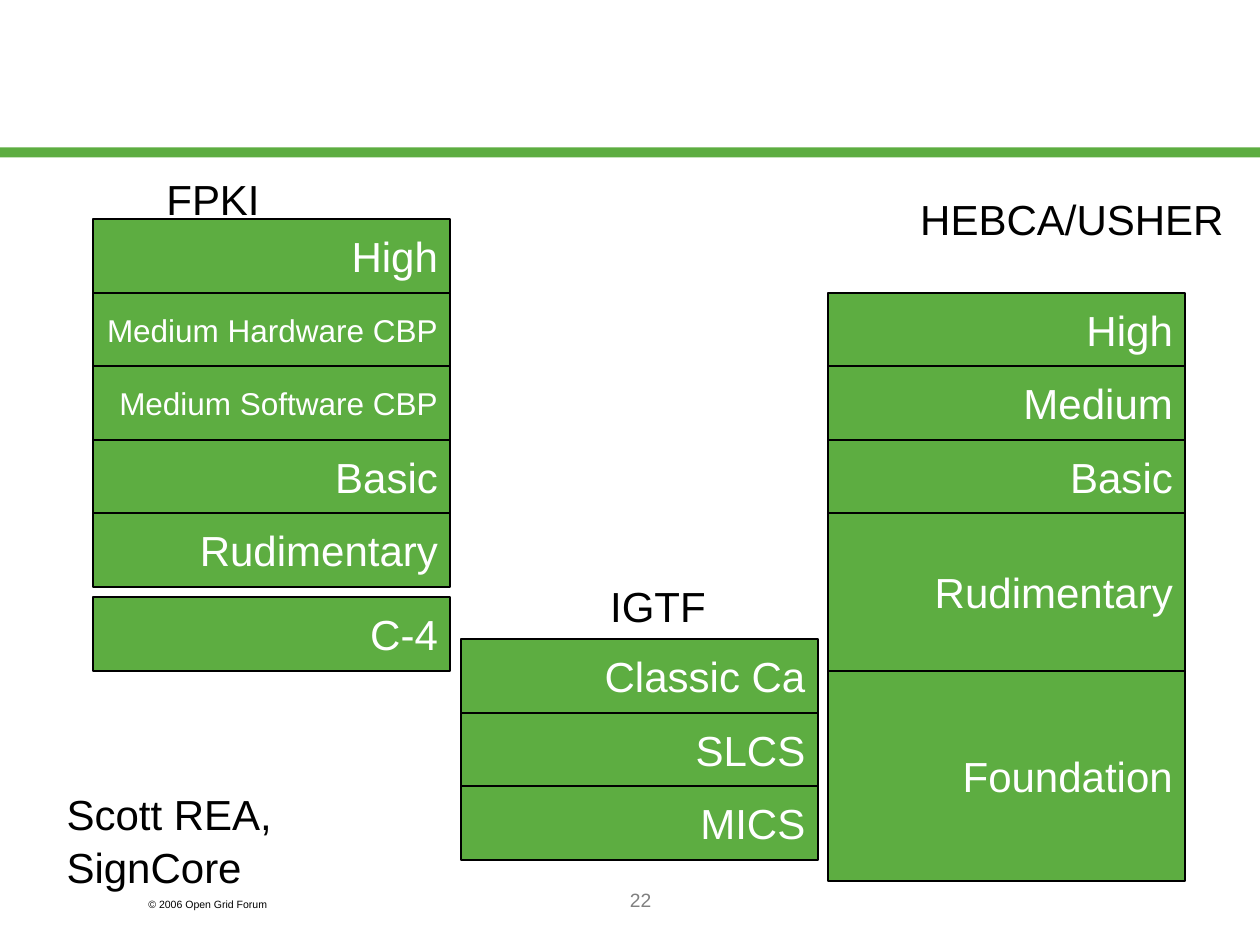
from pptx import Presentation, util as u
from pptx.dml.color import RGBColor
from pptx.enum import shapes, text

HUES = {"green": "5DAD41", "white": "FFFFFF", "black": "000000", "gray": "808080"}
LEFT, RIGHT, MID = text.PP_ALIGN.LEFT, text.PP_ALIGN.RIGHT, text.PP_ALIGN.CENTER

deck = Presentation()
deck.slide_width, deck.slide_height = u.Inches(10), u.Inches(7.5)
slide = deck.slides.add_slide(deck.slide_layouts[6])

# Grid: twelfths of an inch, counted from the top left level box
CELL = 1 / 12
X0, Y0 = 0.74, 1.74
WIDE, STEP, HIGH = 34, 35, 7


def block(x, y, w, h):
    box = slide.shapes.add_shape(
        shapes.MSO_SHAPE.RECTANGLE, *[u.Inches(v) for v in (x, y, w, h)])
    box.shadow.inherit = False
    box.fill.solid()
    box.fill.fore_color.rgb = RGBColor.from_string(HUES["green"])
    box.line.fill.background()
    return box


def write(box, words, size, hue, align, wrap=True, lead=1.0):
    frame = box.text_frame
    frame.text = words
    frame.word_wrap = wrap
    for para in frame.paragraphs:
        para.alignment = align
        para.line_spacing = lead
        for run in para.runs:
            run.font.name = "Arial"
            run.font.size = u.Pt(size)
            run.font.color.rgb = RGBColor.from_string(HUES[hue])


# Rule under the empty header
block(0, 1.17, 10, 0.08)

# Stacks of levels: column, then (label, first row, rows, text size)
stacks = [
    (0, [("High", 0, HIGH, 24), ("Medium Hardware CBP", 7, HIGH, 18),
         ("Medium Software CBP", 14, HIGH, 18), ("Basic", 21, HIGH, 24),
         ("Rudimentary", 28, HIGH, 24), ("C-4", 36, HIGH, 24)]),
    (2, [("High", 7, HIGH, 24), ("Medium", 14, HIGH, 24), ("Basic", 21, HIGH, 24),
         ("Rudimentary", 28, 15, 24), ("Foundation", 43, 20, 24)]),
    (1, [("Classic Ca", 40, HIGH, 24), ("SLCS", 47, HIGH, 24),
         ("MICS", 54, HIGH, 24)]),
]
for col, levels in stacks:
    for label, row, rows, size in levels:
        box = block(X0 + col * STEP * CELL, Y0 + row * CELL, WIDE * CELL, rows * CELL)
        box.line.color.rgb = RGBColor.from_string(HUES["black"])
        box.line.width = u.Pt(1)
        box.text_frame.vertical_anchor = text.MSO_ANCHOR.MIDDLE
        write(box, label, size, "white", RIGHT, wrap=False)

# Stack names, author, copyright and page number
notes = [
    ("FPKI", (0.83, 1.31, 1.33, 0.3), 24, "black", RIGHT, True, 1.05),
    ("IGTF", (4.37, 4.54, 1.33, 0.3), 24, "black", RIGHT, True, 1.05),
    ("HEBCA/USHER", (7.05, 1.47, 2.76, 0.5), 24, "black", RIGHT, True, 1.05),
    ("Scott REA,\nSignCore", (0.43, 6.19, 1.85, 0.91), 24, "black", LEFT, False, 1.05),
    ("© 2006 Open Grid Forum", (1.08, 7.08, 1.5, 0.2), 6, "black", LEFT, True, 1.0),
    ("22", (2.17, 7, 5.83, 0.5), 11, "gray", MID, True, 1.0),
]
for words, place, *style in notes:
    box = slide.shapes.add_textbox(*[u.Inches(v) for v in place])
    write(box, words, *style)

deck.save("out.pptx")
